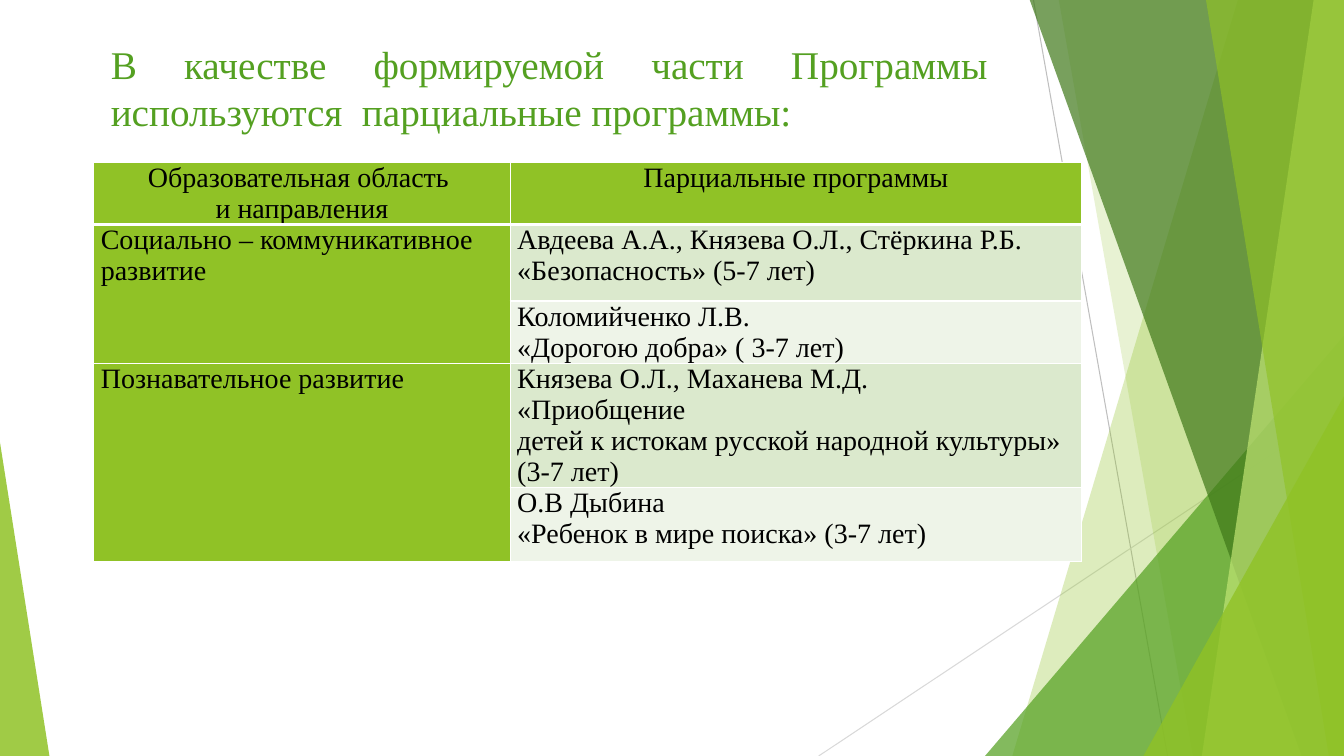
from dataclasses import dataclass

from lxml.etree import SubElement
from pptx import Presentation
from pptx.dml.color import RGBColor
from pptx.enum.shapes import MSO_CONNECTOR, MSO_SHAPE
from pptx.enum.text import MSO_ANCHOR, PP_ALIGN
from pptx.oxml import parse_xml
from pptx.oxml.ns import nsdecls, qn
from pptx.util import Inches, Pt


@dataclass(frozen=True)
class Theme:
    """Colours, font and type sizes of the slide."""
    lime: str = "90C226"
    green: str = "54A021"
    forest: str = "3F7819"
    pale: str = "C0E474"
    band_dark: str = "DBE9CD"
    band_light: str = "EEF4E8"
    white: str = "FFFFFF"
    black: str = "000000"
    grey: str = "BFBFBF"
    light_grey: str = "D9D9D9"
    font: str = "Times New Roman"
    title_size: float = 28
    body_size: float = 20


THEME = Theme()
WIDTH, HEIGHT, TOP = 13.33, 7.5, -0.01

LINES = [
    (10.25, 0, 11.58, HEIGHT, THEME.grey),
    (WIDTH, 4.03, 8.12, HEIGHT, THEME.light_grey),
]
BACK_BANDS = [
    (12.28, 10.04, THEME.lime, 30),
    (10.5, 11.83, THEME.lime, 20),
]
FRONT_BANDS = [
    (10.21, 12.91, THEME.forest, 70),
    (13.03, 11.92, THEME.pale, 70),
    (11.96, 13.18, THEME.lime, 65),
]

TITLE = "В качестве формируемой части Программы используются  парциальные программы:"
HEADERS = [["Образовательная область ", "и направления"], ["Парциальные программы"]]
AREAS = [
    ("Социально – коммуникативное развитие", [
        ["Авдеева А.А., Князева О.Л., Стёркина Р.Б. «Безопасность» (5-7 лет)"],
        ["Коломийченко Л.В.", "«Дорогою добра» ( 3-7 лет)"],
    ]),
    ("Познавательное развитие", [
        ["Князева О.Л., Маханева М.Д.", "«Приобщение",
         "детей к истокам русской народной культуры»  (3-7 лет)"],
        ["О.В Дыбина", "«Ребенок в мире поиска» (3-7 лет)"],
    ]),
]
COLUMNS = [4.13, 5.67]
ROWS = [0.49, 0.76, 0.38, 1.15, 0.73]


def apply(obj, values):
    """Set each attribute of obj from a dict of values."""
    for name, value in values.items():
        setattr(obj, name, value)


def paint(s, color, alpha):
    """Give a shape a translucent fill with no line or shadow."""
    s.shadow.inherit = False
    s.line.fill.background()
    s.fill.solid()
    s.fill.fore_color.rgb = RGBColor.from_string(color)
    clr = s.fill._xPr.find(qn("a:solidFill"))[0]
    SubElement(clr, qn("a:alpha"), val=str(alpha * 1000))


def add_line(slide, x1, y1, x2, y2, color):
    """Draw a thin straight line."""
    s = slide.shapes.add_connector(
        MSO_CONNECTOR.STRAIGHT, Inches(x1), Inches(y1), Inches(x2), Inches(y2))
    s.line.width = Pt(0.75)
    s.line.color.rgb = RGBColor.from_string(color)
    SubElement(s._element.spPr, qn("a:effectLst"))


def add_band(slide, top_x, bottom_x, color, alpha):
    """Draw a band from a slanted left edge to the right slide edge."""
    corners = [(WIDTH, TOP), (WIDTH, HEIGHT), (bottom_x, HEIGHT)]
    builder = slide.shapes.build_freeform(Inches(top_x), Inches(TOP))
    builder.add_line_segments([(Inches(x), Inches(y)) for x, y in corners], close=True)
    paint(builder.convert_to_shape(), color, alpha)


def add_triangle(slide, left, top, width, apex, color, alpha):
    """Draw a triangle standing on the bottom slide edge."""
    s = slide.shapes.add_shape(
        MSO_SHAPE.ISOSCELES_TRIANGLE, Inches(left), Inches(top),
        Inches(width), Inches(HEIGHT - top))
    s.adjustments[0] = apex
    paint(s, color, alpha)


def write(tf, lines, size, color, align):
    """Fill a text frame with one paragraph per line."""
    for i, line in enumerate(lines):
        p = tf.paragraphs[0] if i == 0 else tf.add_paragraph()
        p.alignment = align
        r = p.add_run()
        r.text = line
        apply(r.font, {"name": THEME.font, "size": Pt(size), "bold": False})
        r.font.color.rgb = RGBColor.from_string(color)


def add_title(slide):
    """Add the justified heading."""
    s = slide.shapes.add_textbox(Inches(1), Inches(0.35), Inches(8.89), Inches(1.04))
    apply(s.text_frame, {"word_wrap": True, "vertical_anchor": MSO_ANCHOR.TOP})
    write(s.text_frame, [TITLE], THEME.title_size, THEME.green, PP_ALIGN.JUSTIFY)


def set_borders(cell, top, bottom):
    """Give a cell white borders, with top and bottom widths in points."""
    tc_pr = cell._tc.get_or_add_tcPr()
    widths = {"lnL": 1, "lnR": 1, "lnT": top, "lnB": bottom}
    for i, (tag, width) in enumerate(widths.items()):
        tc_pr.insert(i, parse_xml(
            f'<a:{tag} {nsdecls("a")} w="{Pt(width)}"><a:solidFill>'
            f'<a:srgbClr val="{THEME.white}"/></a:solidFill></a:{tag}>'))


def fill_cell(cell, lines, color, align=PP_ALIGN.LEFT):
    """Write and colour one table cell."""
    apply(cell, {"margin_left": Inches(0.07), "margin_right": Inches(0.07),
                 "margin_top": 0, "margin_bottom": 0,
                 "vertical_anchor": MSO_ANCHOR.TOP})
    cell.fill.solid()
    cell.fill.fore_color.rgb = RGBColor.from_string(color)
    write(cell.text_frame, lines, THEME.body_size, THEME.black, align)


def add_programs_table(slide):
    """Add the table of areas and their programs."""
    table = slide.shapes.add_table(
        len(ROWS), len(COLUMNS), Inches(0.93), Inches(1.61),
        Inches(sum(COLUMNS)), Inches(sum(ROWS))).table
    apply(table, {"first_row": False, "horz_banding": False})
    for column, width in zip(table.columns, COLUMNS):
        column.width = Inches(width)
    for row, height in zip(table.rows, ROWS):
        row.height = Inches(height)
    for col, lines in enumerate(HEADERS):
        fill_cell(table.cell(0, col), lines, THEME.lime, PP_ALIGN.CENTER)
    for i, (area, programs) in enumerate(AREAS):
        first = 1 + 2 * i
        table.cell(first, 0).merge(table.cell(first + 1, 0))
        fill_cell(table.cell(first, 0), [area], THEME.lime)
        bands = (THEME.band_dark, THEME.band_light)
        for j, (lines, color) in enumerate(zip(programs, bands)):
            fill_cell(table.cell(first + j, 1), lines, color)
    for row in range(len(ROWS)):
        for col in range(len(COLUMNS)):
            set_borders(table.cell(row, col), 3 if row == 1 else 1, 3 if row == 0 else 1)


def main():
    """Build and save the slide."""
    prs = Presentation()
    apply(prs, {"slide_width": Inches(WIDTH), "slide_height": Inches(HEIGHT)})
    slide = prs.slides.add_slide(prs.slide_layouts[6])
    for line in LINES:
        add_line(slide, *line)
    for band in BACK_BANDS:
        add_band(slide, *band)
    add_triangle(slide, 9.77, 3.33, 3.56, 1, THEME.green, 72)
    for band in FRONT_BANDS:
        add_band(slide, *band)
    add_triangle(slide, 11.34, 3.93, 1.99, 1, THEME.lime, 80)
    add_triangle(slide, 0, 4.39, 0.49, 0, THEME.lime, 85)
    add_programs_table(slide)
    add_title(slide)
    prs.save("out.pptx")


if __name__ == "__main__":
    main()
